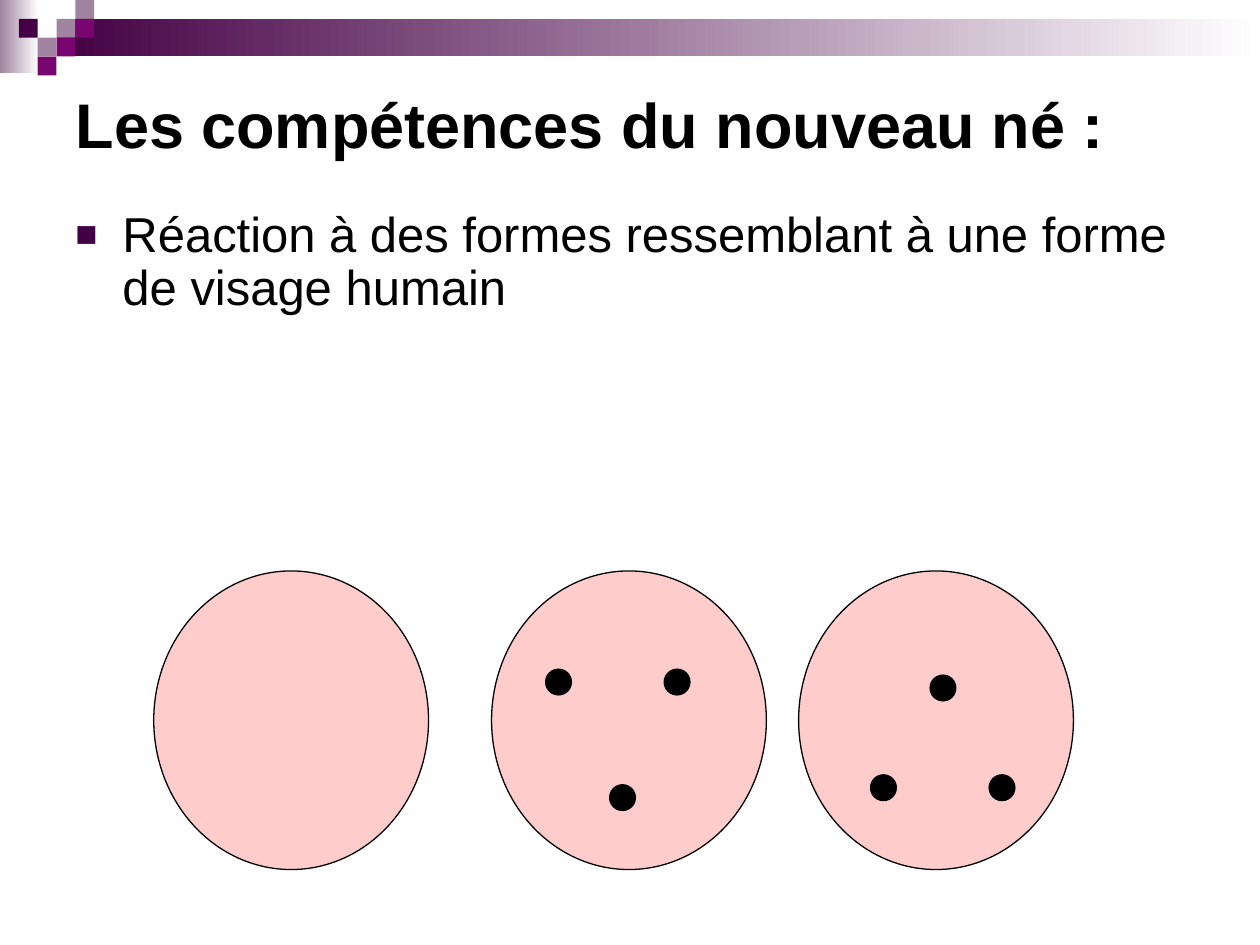
"""Build the slide on newborn reactions to face-like shapes."""
from lxml.etree import SubElement
from pptx import Presentation
from pptx.dml.color import RGBColor
from pptx.enum.shapes import MSO_SHAPE
from pptx.enum.text import MSO_ANCHOR, MSO_AUTO_SIZE, PP_ALIGN
from pptx.oxml.ns import qn
from pptx.util import Cm, Pt


def color(value):
    """Return the colour for a hex string."""
    return RGBColor.from_string(value)


def add_filled(kind, left, top, width, height, fills, outline=None):
    """Add a shape, sizes in cm, with one solid colour or two gradient colours."""
    shape = page.shapes.add_shape(kind, Cm(left), Cm(top), Cm(width), Cm(height))
    shape.shadow.inherit = False
    if len(fills) == 1:
        shape.fill.solid()
        shape.fill.fore_color.rgb = color(fills[0])
    else:
        shape.fill.gradient()
        shape.fill.gradient_angle = 0
        for stop, value in zip(shape.fill.gradient_stops, fills):
            stop.color.rgb = color(value)
    if outline:
        shape.line.color.rgb = color(outline)
        shape.line.width = Pt(0.75)
    else:
        shape.line.fill.background()


DARK, PURPLE, MAUVE = "440044", "790571", "9F839F"
WHITE, BLACK, PINK = "FFFFFF", "000000", "FFCCCC"

deck = Presentation()
deck.slide_width, deck.slide_height = Cm(25.4), Cm(19.05)
page = deck.slides.add_slide(deck.slide_layouts[5])

add_filled(MSO_SHAPE.RECTANGLE, 0, 0, 0.78, 1.47, [MAUVE, WHITE])
add_filled(MSO_SHAPE.RECTANGLE, 1.14, 0.38, 24.26, 0.76, [DARK, WHITE])

tile = 0.38
tiles = [
    (3, 1, MAUVE), (4, 0, MAUVE), (4, 1, PURPLE), (2, 2, MAUVE),
    (1, 1, DARK), (3, 2, PURPLE), (2, 3, PURPLE),
]
for column, row, value in tiles:
    add_filled(MSO_SHAPE.RECTANGLE, column * tile, row * tile, tile, tile, [value])

title = page.shapes.title
body = page.shapes.add_textbox(Cm(1.27), Cm(4.11), Cm(22.86), Cm(3.43))
texts = [
    (title, "Les compétences du nouveau né :", {"size": Pt(36), "bold": True}, 0.46),
    (body, "Réaction à des formes ressemblant à une forme de visage humain",
     {"size": Pt(28), "bold": False}, 0.13),
]
title.left, title.top, title.width, title.height = Cm(1.27), Cm(1.27), Cm(22.86), Cm(3.81)
for box, wording, font_format, margin in texts:
    frame = box.text_frame
    frame.text = wording
    frame_format = {
        "word_wrap": True, "auto_size": MSO_AUTO_SIZE.NONE,
        "vertical_anchor": MSO_ANCHOR.TOP, "margin_top": Cm(margin),
    }
    for name, value in frame_format.items():
        setattr(frame, name, value)
    para = frame.paragraphs[0]
    para.alignment = PP_ALIGN.LEFT
    span = para.runs[0]
    for name, value in {"name": "Arial", **font_format}.items():
        setattr(span.font, name, value)
    span.font.color.rgb = color(BLACK)

bullet_para = body.text_frame.paragraphs[0]
bullet_para.line_spacing = 0.9
bullet_para.space_before = Pt(5.6)
properties = bullet_para._p.get_or_add_pPr()
properties.set("marL", str(Cm(0.95)))
properties.set("indent", str(-Cm(0.95)))
bullet_color = SubElement(properties, qn("a:buClr"))
SubElement(bullet_color, qn("a:srgbClr"), val=DARK)
SubElement(properties, qn("a:buSzPct"), val="75000")
SubElement(properties, qn("a:buFont"), typeface="Arial")
SubElement(properties, qn("a:buChar"), char="■")

face_top, face_width, face_height, dot = 11.51, 5.54, 6.02, 0.52
faces = [
    (3.1, []),
    (16.1, [(2.65, 2.1), (1.45, 4.11), (3.84, 4.11)]),
    (9.91, [(1.09, 1.98), (3.48, 1.98), (2.38, 4.31)]),
]
for face_left, dots in faces:
    add_filled(MSO_SHAPE.OVAL, face_left, face_top, face_width, face_height, [PINK], BLACK)
    for across, down in dots:
        add_filled(MSO_SHAPE.OVAL, face_left + across, face_top + down, dot, dot, [BLACK], BLACK)

deck.save("out.pptx")
